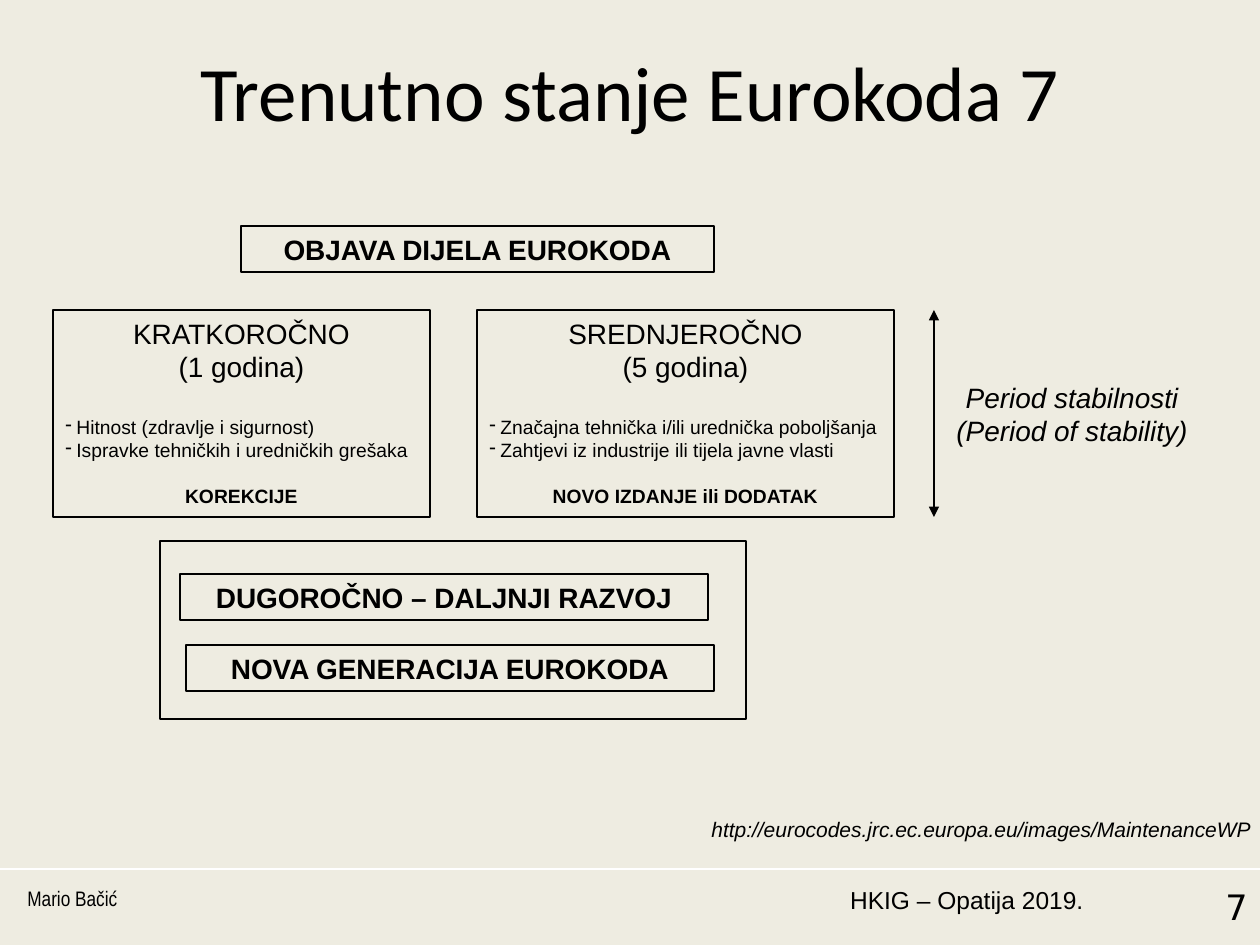
from dataclasses import dataclass

import pptx
import pptx.dml.color
import pptx.enum.shapes
import pptx.enum.text
import pptx.oxml.ns
import pptx.util
from lxml import etree

EMU_PER_PX = 914400 / 126
LEFT, CENTER, RIGHT = (
    pptx.enum.text.PP_ALIGN.LEFT,
    pptx.enum.text.PP_ALIGN.CENTER,
    pptx.enum.text.PP_ALIGN.RIGHT,
)


@dataclass(frozen=True)
class Theme:
    background: str = "EEECE1"
    ink: str = "000000"
    rule: str = "FFFFFF"
    font: str = "Arial"
    title_font: str = "Calibri"
    author_font: str = "Arial Narrow"
    number_font: str = "DejaVu Sans"
    title: int = 44
    number: int = 20
    heading: int = 16
    event: int = 14
    small: int = 12
    detail: int = 11
    outline: float = 0.75


THEME = Theme()


def px(length):
    return pptx.util.Emu(round(length * EMU_PER_PX))


def color(value):
    return pptx.dml.color.RGBColor.from_string(value)


def add_child(parent, tag, **attributes):
    return etree.SubElement(parent, pptx.oxml.ns.qn(tag), attributes)


def add_text(shape, text, size=THEME.heading, font=THEME.font, bold=False, italic=False,
             align=CENTER, before=0, bullet=None):
    """Fill the first empty paragraph of the shape, or append a new one."""
    frame = shape.text_frame
    paragraph = frame.add_paragraph() if frame.text else frame.paragraphs[0]
    paragraph.alignment = align
    paragraph.space_before = pptx.util.Pt(before)
    if bullet:
        properties = paragraph._p.get_or_add_pPr()
        indent = px(11)
        properties.set("marL", str(indent))
        properties.set("indent", str(-indent))
        add_child(properties, "a:buFontTx")
        add_child(properties, "a:buChar", char=bullet)
    run = paragraph.add_run()
    run.text = text
    run.font.size = pptx.util.Pt(size)
    run.font.name = font
    run.font.bold = bold
    run.font.italic = italic
    run.font.color.rgb = color(THEME.ink)


def add_label(slide, box, text, **text_format):
    shape = slide.shapes.add_textbox(*map(px, box))
    shape.text_frame.word_wrap = True
    for line in text.split("\n"):
        add_text(shape, line, **text_format)


def add_frame(slide, box, fill=None):
    """Outlined rectangle whose text starts at the top."""
    shape = slide.shapes.add_shape(pptx.enum.shapes.MSO_SHAPE.RECTANGLE, *map(px, box))
    shape.shadow.inherit = False
    if fill:
        shape.fill.solid()
        shape.fill.fore_color.rgb = color(fill)
    else:
        shape.fill.background()
    shape.line.color.rgb = color(THEME.ink)
    shape.line.width = pptx.util.Pt(THEME.outline)
    shape.text_frame.word_wrap = True
    shape.text_frame.vertical_anchor = pptx.enum.text.MSO_ANCHOR.TOP
    return shape


def add_line(slide, start, end, line_color, width, arrows=False):
    connector = slide.shapes.add_connector(
        pptx.enum.shapes.MSO_CONNECTOR.STRAIGHT, *map(px, start + end))
    connector.line.color.rgb = color(line_color)
    connector.line.width = pptx.util.Pt(width)
    if arrows:
        line = connector.line._get_or_add_ln()
        for tag in ("a:headEnd", "a:tailEnd"):
            add_child(line, tag, type="triangle")
    add_child(connector._element.spPr, "a:effectLst")


def add_banner(slide, box, text):
    add_text(add_frame(slide, box), text, bold=True)


def add_term_card(slide, box, heading, duration, reasons, outcome):
    card = add_frame(slide, box)
    add_text(card, heading)
    add_text(card, duration)
    for index, reason in enumerate(reasons):
        add_text(card, reason, size=THEME.detail, align=LEFT, bullet="-",
                 before=0 if index else 18)
    add_text(card, outcome, size=THEME.detail, bold=True, before=13)


def add_long_term(slide, box):
    left, top, width, height = box
    add_frame(slide, box, fill=THEME.background)
    add_banner(slide, (left + 20, top + 33, 528, 46), "DUGOROČNO – DALJNJI RAZVOJ")
    add_banner(slide, (left + 26, top + 104, 528, 46), "NOVA GENERACIJA EUROKODA")


def add_stability_period(slide, box):
    left, top, width, height = box
    add_line(slide, (left, top), (left, top + height), THEME.ink, THEME.outline, arrows=True)
    add_label(slide, (left + 8, top + 64, width - 8, 81),
              "Period stabilnosti\n(Period of stability)", italic=True)


def add_footer(slide, box):
    left, top, width, height = box
    add_line(slide, (left, top), (left + width, top), THEME.rule, 1.5)
    text_top, text_height = top + 10, height - 10
    add_label(slide, (left + 15, text_top, 824, text_height), "Mario Bačić",
              size=THEME.small, font=THEME.author_font, align=LEFT)
    add_label(slide, (left + 828, text_top, 268, text_height), "HKIG – Opatija 2019.",
              size=THEME.event, align=RIGHT)
    add_label(slide, (left + 1106, text_top, 154, text_height), "7",
              size=THEME.number, font=THEME.number_font, align=RIGHT)


def main():
    presentation = pptx.Presentation()
    presentation.slide_width, presentation.slide_height = px(1260), px(945)
    slide = presentation.slides.add_slide(presentation.slide_layouts[6])
    slide.background.fill.solid()
    slide.background.fill.fore_color.rgb = color(THEME.background)

    add_label(slide, (63, 38, 1134, 158), "Trenutno stanje Eurokoda 7",
              size=THEME.title, font=THEME.title_font)
    add_banner(slide, (241, 226, 473, 46), "OBJAVA DIJELA EUROKODA")
    cards_top, cards_height = 310, 207
    add_term_card(
        slide, (53, cards_top, 377, cards_height), "KRATKOROČNO", "(1 godina)",
        ["Hitnost (zdravlje i sigurnost)", "Ispravke tehničkih i uredničkih grešaka"],
        "KOREKCIJE")
    add_term_card(
        slide, (477, cards_top, 417, cards_height), "SREDNJEROČNO", "(5 godina)",
        ["Značajna tehnička i/ili urednička poboljšanja",
         "Zahtjevi iz industrije ili tijela javne vlasti"],
        "NOVO IZDANJE ili DODATAK")
    add_stability_period(slide, (934, cards_top, 268, cards_height))
    add_long_term(slide, (160, 541, 586, 178))
    add_label(slide, (699, 810, 630, 38),
              "http://eurocodes.jrc.ec.europa.eu/images/MaintenanceWP",
              size=THEME.small, italic=True, align=LEFT)
    add_footer(slide, (0, 869, 1260, 76))
    presentation.save("out.pptx")


if __name__ == "__main__":
    main()
